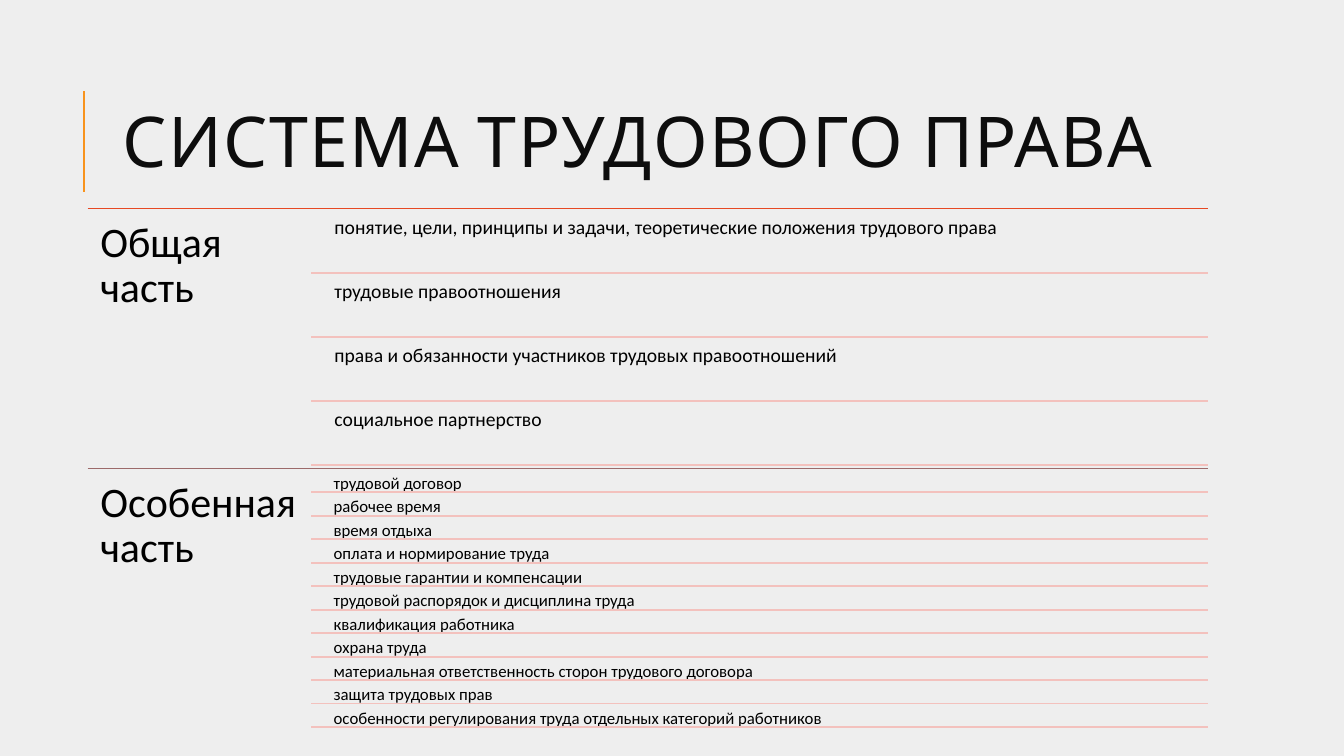
from lxml import etree
from pptx import Presentation
from pptx import util as u
from pptx.dml import color
from pptx.enum import shapes, text
from pptx.oxml import ns

LEFT, RIGHT = 62.64, 862.56
RULE_LEFT, ITEM_LEFT = 222.48, 234.72
HEADING_HEIGHT = 185.76
GAP_SHARE = 0.05  # space above an item, as a share of its height

# heading, top, rule colour, item height, item size, item inset, items
SECTIONS = [
    ("Общая часть", 149.04, "E64823", 43.65, 14, 4.2, [
        "понятие, цели, принципы и задачи, теоретические положения трудового права",
        "трудовые правоотношения",
        "права и обязанности участников трудовых правоотношений",
        "социальное партнерство",
    ]),
    ("Особенная часть", 334.8, "9C6A6A", 15.98, 12, 3.6, [
        "трудовой договор",
        "рабочее время",
        "время отдыха",
        "оплата и нормирование труда",
        "трудовые гарантии и компенсации",
        "трудовой распорядок и дисциплина труда",
        "квалификация работника",
        "охрана труда",
        "материальная ответственность сторон трудового договора",
        "защита трудовых прав",
        "особенности регулирования труда отдельных категорий работников",
    ]),
]


def rgb(value):
    return color.RGBColor.from_string(value)


def add_rule(slide, start, end, line_color, width, shadow=False):
    rule = slide.shapes.add_connector(
        shapes.MSO_CONNECTOR.STRAIGHT, *(u.Pt(v) for v in (*start, *end)))
    rule.line.color.rgb = rgb(line_color)
    rule.line.width = u.Pt(width)
    properties = rule.line._get_or_add_ln().getparent()
    effects = etree.SubElement(properties, ns.qn("a:effectLst"))
    if shadow:
        outer = etree.SubElement(
            effects, ns.qn("a:outerShdw"), blurRad=str(u.Pt(4)),
            dist=str(u.Pt(1)), dir="5400000", rotWithShape="0")
        black = etree.SubElement(outer, ns.qn("a:srgbClr"), val="000000")
        etree.SubElement(black, ns.qn("a:alpha"), val="50000")


def add_label(slide, box, words, size, inset, font="Calibri",
              font_color="000000", spacing=0.9):
    """Add a wrapped text box with equal insets and return its text frame."""
    frame = slide.shapes.add_textbox(*(u.Pt(v) for v in box)).text_frame
    frame.word_wrap = True
    frame.margin_left = frame.margin_right = u.Pt(inset)
    frame.margin_top = frame.margin_bottom = u.Pt(inset)
    frame.text = words
    paragraph = frame.paragraphs[0]
    paragraph.line_spacing = spacing
    run_font = paragraph.runs[0].font
    run_font.name = font
    run_font.size = u.Pt(size)
    run_font.color.rgb = rgb(font_color)
    return frame


def add_title(slide, words):
    add_rule(slide, (59.76, 136.8), (59.76, 64.8), "F8931D", 1.5)
    frame = add_label(slide, (80.64, 46.08, 765.36, 118.08), words, 50, 7.2,
                      "Cabin", "0D0D0D", 0.8)
    frame.vertical_anchor = text.MSO_ANCHOR.MIDDLE
    letter_spacing = "100"  # hundredths of a point
    frame.paragraphs[0].runs[0].font._element.set("spc", letter_spacing)


def add_section(slide, heading, top, rule_color, height, size, inset, items):
    add_rule(slide, (LEFT, top), (RIGHT, top), rule_color, 0.75, shadow=True)
    add_label(slide, (LEFT, top, RULE_LEFT - LEFT, HEADING_HEIGHT),
              heading, 30, 9)
    gap = height * GAP_SHARE
    for index, item in enumerate(items):
        item_top = top + gap + index * (height + gap)
        bottom = item_top + height
        add_label(slide, (ITEM_LEFT, item_top, RIGHT - ITEM_LEFT, height),
                  item, size, inset)
        add_rule(slide, (RULE_LEFT, bottom), (RIGHT, bottom), "F3C1BD", 1.25)


def main():
    deck = Presentation()
    deck.slide_width, deck.slide_height = u.Pt(960), u.Pt(540)
    slide = deck.slides.add_slide(deck.slide_layouts[6])
    background = slide.background.fill
    background.solid()
    background.fore_color.rgb = rgb("EEEEEE")
    add_title(slide, "СИСТЕМА ТРУДОВОГО ПРАВА")
    for section in SECTIONS:
        add_section(slide, *section)
    deck.save("out.pptx")


if __name__ == "__main__":
    main()
